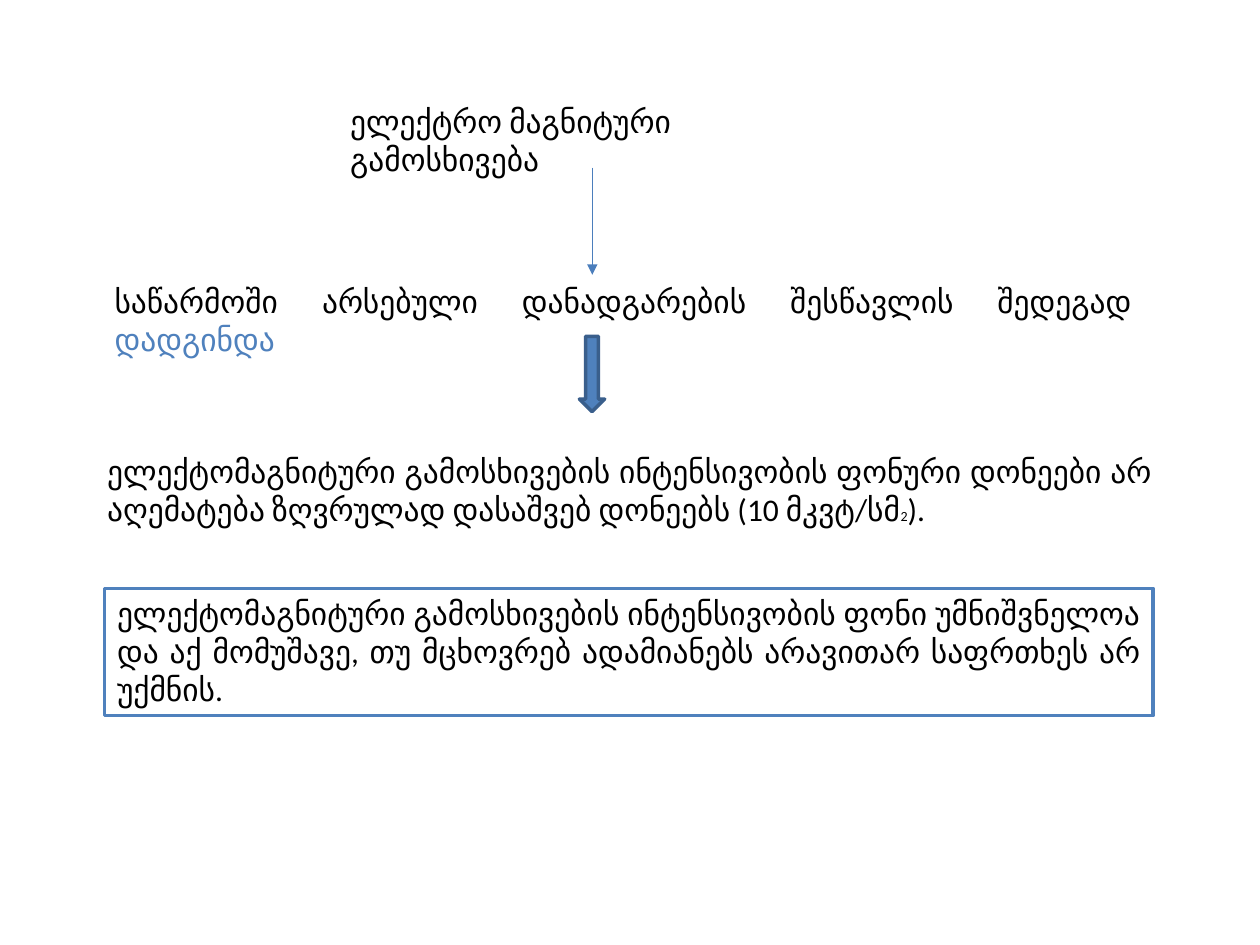
from lxml.etree import SubElement
from pptx import Presentation
from pptx.dml.color import RGBColor
from pptx.enum.shapes import MSO_CONNECTOR as CONN, MSO_SHAPE as SHAPE
from pptx.enum.text import MSO_ANCHOR as ANCHOR, MSO_AUTO_SIZE as AUTO, PP_ALIGN as ALIGN
from pptx.oxml.ns import qn
from pptx.util import Cm, Pt

BLACK, WHITE, BLUE, DARK_BLUE, LINE_BLUE = "000000", "FFFFFF", "4F81BD", "3A5F8C", "4B7EBC"


def rgb(color):
    return RGBColor.from_string(color)


class SlideBuilder:
    font, size = "Calibri", 18

    def __init__(self, slide):
        self.s = slide

    def fill_text(self, sp, runs, align):
        tf = sp.text_frame
        tf.word_wrap = True
        tf.auto_size = AUTO.SHAPE_TO_FIT_TEXT
        tf.vertical_anchor = ANCHOR.TOP
        p = tf.paragraphs[0]
        p.alignment = align
        p.font.name = self.font
        for text, size, color in runs:
            r = p.add_run()
            r.text = text
            r.font.size = Pt(size or self.size)
            r.font.color.rgb = rgb(color)

    def text(self, box, *runs, align=ALIGN.JUSTIFY):
        self.fill_text(self.s.shapes.add_textbox(*map(Cm, box)), runs, align)

    def shape(self, kind, box, fill, line, *runs):
        sp = self.s.shapes.add_shape(kind, *map(Cm, box))
        sp.shadow.inherit = False
        sp.fill.solid()
        sp.fill.fore_color.rgb = rgb(fill)
        sp.line.color.rgb = rgb(line)
        sp.line.width = Pt(2)
        if runs:
            self.fill_text(sp, runs, ALIGN.JUSTIFY)

    def arrow(self, start, end, color, width):
        c = self.s.shapes.add_connector(CONN.STRAIGHT, *map(Cm, start + end))
        c.line.color.rgb = rgb(color)
        c.line.width = Pt(width)
        sp_pr = c._element.spPr
        SubElement(sp_pr.find(qn("a:ln")), qn("a:tailEnd"), type="triangle")
        SubElement(sp_pr, qn("a:effectLst"))


def main():
    prs = Presentation()
    prs.slide_width, prs.slide_height = Cm(25.4), Cm(19.05)
    b = SlideBuilder(prs.slides.add_slide(prs.slide_layouts[6]))

    b.text((6.81, 1.93, 10.69, 1.02),
           ("ელექტრო მაგნიტური გამოსხივება", None, BLACK), align=ALIGN.LEFT)
    b.text((2.06, 5.56, 21.01, 1.02),
           ("საწარმოში არსებული დანადგარების შესწავლის შედეგად ", None, BLACK),
           ("დადგინდა", None, BLUE))
    b.arrow((11.94, 3.38), (11.94, 5.54), LINE_BLUE, 0.75)
    b.text((1.91, 8.99, 21.56, 1.8),
           ("ელექტომაგნიტური გამოსხივების ინტენსივობის ფონური დონეები არ "
            "აღემატება ზღვრულად დასაშვებ დონეებს (10 მკვტ/სმ", None, BLACK),
           ("2", 8, BLACK),
           (").", None, BLACK))
    b.shape(SHAPE.DOWN_ARROW, (11.68, 6.78, 0.51, 1.52), BLUE, DARK_BLUE)
    b.shape(SHAPE.RECTANGLE, (2.11, 11.86, 21.13, 2.57), WHITE, BLUE,
            ("ელექტომაგნიტური გამოსხივების ინტენსივობის ფონი უმნიშვნელოა "
             "და აქ მომუშავე, თუ მცხოვრებ ადამიანებს არავითარ საფრთხეს არ "
             "უქმნის.", None, BLACK))

    prs.save("out.pptx")


if __name__ == "__main__":
    main()
